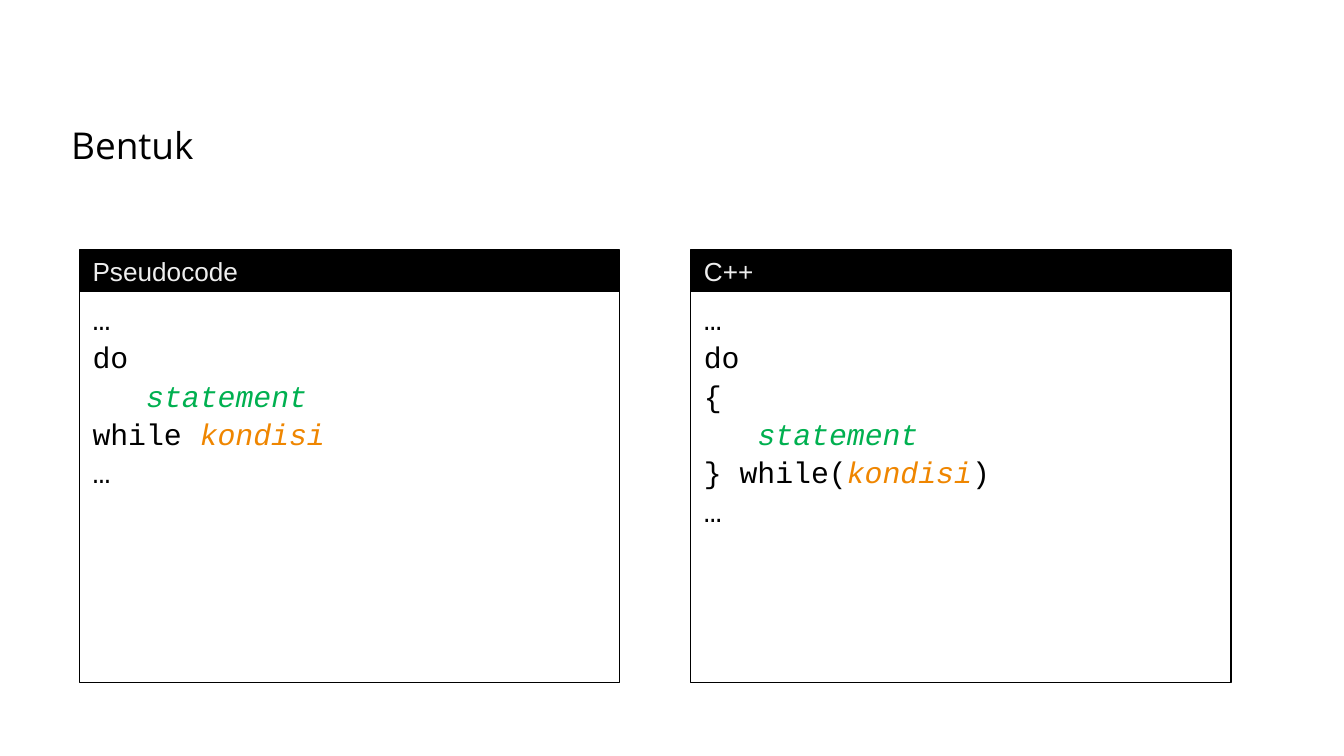
from pptx import Presentation
from pptx.dml.color import RGBColor
from pptx.enum.shapes import MSO_SHAPE
from pptx.enum.text import MSO_ANCHOR, PP_ALIGN
from pptx.util import Pt

COLORS = {
    "black": "000000",
    "heading": "EEEEEE",
    "statement": "00B050",
    "condition": "EF8600",
}
PANEL_WIDTH = 289.5
HEADER_TOP, HEADER_HEIGHT = 133.9, 22.3
CODE_HEIGHT = 209.5

STATEMENT_LINE = [("   ", "black"), ("statement", "statement")]
CONDITION = ("kondisi", "condition")
ELLIPSIS_LINE = [("…", "black")]
DO_LINE = [("do", "black")]

PANELS = [
    (42.5, "Pseudocode", [
        ELLIPSIS_LINE,
        DO_LINE,
        STATEMENT_LINE,
        [("while ", "black"), CONDITION],
        ELLIPSIS_LINE,
    ]),
    (370, "C++", [
        ELLIPSIS_LINE,
        DO_LINE,
        [("{", "black")],
        STATEMENT_LINE,
        [("} while(", "black"), CONDITION, (")", "black")],
        ELLIPSIS_LINE,
    ]),
]


def rgb(name):
    return RGBColor.from_string(COLORS[name])


def add_run(paragraph, text, font_name, size, color, italic=False):
    run = paragraph.add_run()
    run.text = text
    run.font.name = font_name
    run.font.size = Pt(size)
    run.font.italic = italic
    run.font.color.rgb = rgb(color)


def add_title(slide, text):
    title = slide.shapes.add_textbox(Pt(31), Pt(58.3), Pt(658), Pt(31))
    frame = title.text_frame
    frame.word_wrap = True
    frame.margin_left = frame.margin_right = Pt(7.2)
    frame.margin_top = frame.margin_bottom = Pt(7.2)
    add_run(frame.paragraphs[0], text, "Open Sans", 19.8, "black")


def add_box(slide, left, top, height, fill=None):
    """Add an outlined rectangle of panel width, hollow unless a fill is named."""
    box = slide.shapes.add_shape(
        MSO_SHAPE.RECTANGLE, Pt(left), Pt(top), Pt(PANEL_WIDTH), Pt(height))
    box.shadow.inherit = False
    box.line.color.rgb = rgb("black")
    box.line.width = Pt(0.75)
    if fill:
        box.fill.solid()
        box.fill.fore_color.rgb = rgb(fill)
    else:
        box.fill.background()
    return box


def add_code(slide, left, lines):
    frame = add_box(slide, left, HEADER_TOP + HEADER_HEIGHT, CODE_HEIGHT).text_frame
    frame.word_wrap = True
    frame.vertical_anchor = MSO_ANCHOR.TOP
    for index, line in enumerate(lines):
        paragraph = frame.add_paragraph() if index else frame.paragraphs[0]
        paragraph.alignment = PP_ALIGN.LEFT
        paragraph.line_spacing = 1.07
        for text, color in line:
            add_run(paragraph, text, "Courier New", 16, color, color != "black")


def add_header(slide, left, text):
    frame = add_box(slide, left, HEADER_TOP, HEADER_HEIGHT, "black").text_frame
    frame.word_wrap = False
    frame.vertical_anchor = MSO_ANCHOR.MIDDLE
    paragraph = frame.paragraphs[0]
    paragraph.alignment = PP_ALIGN.LEFT
    add_run(paragraph, text, "Arial", 14, "heading")


def main():
    deck = Presentation()
    deck.slide_width, deck.slide_height = Pt(720), Pt(405)
    slide = deck.slides.add_slide(deck.slide_layouts[6])
    add_title(slide, "Bentuk")
    for left, language, lines in PANELS:
        add_code(slide, left, lines)
        add_header(slide, left, language)
    deck.save("out.pptx")


if __name__ == "__main__":
    main()
